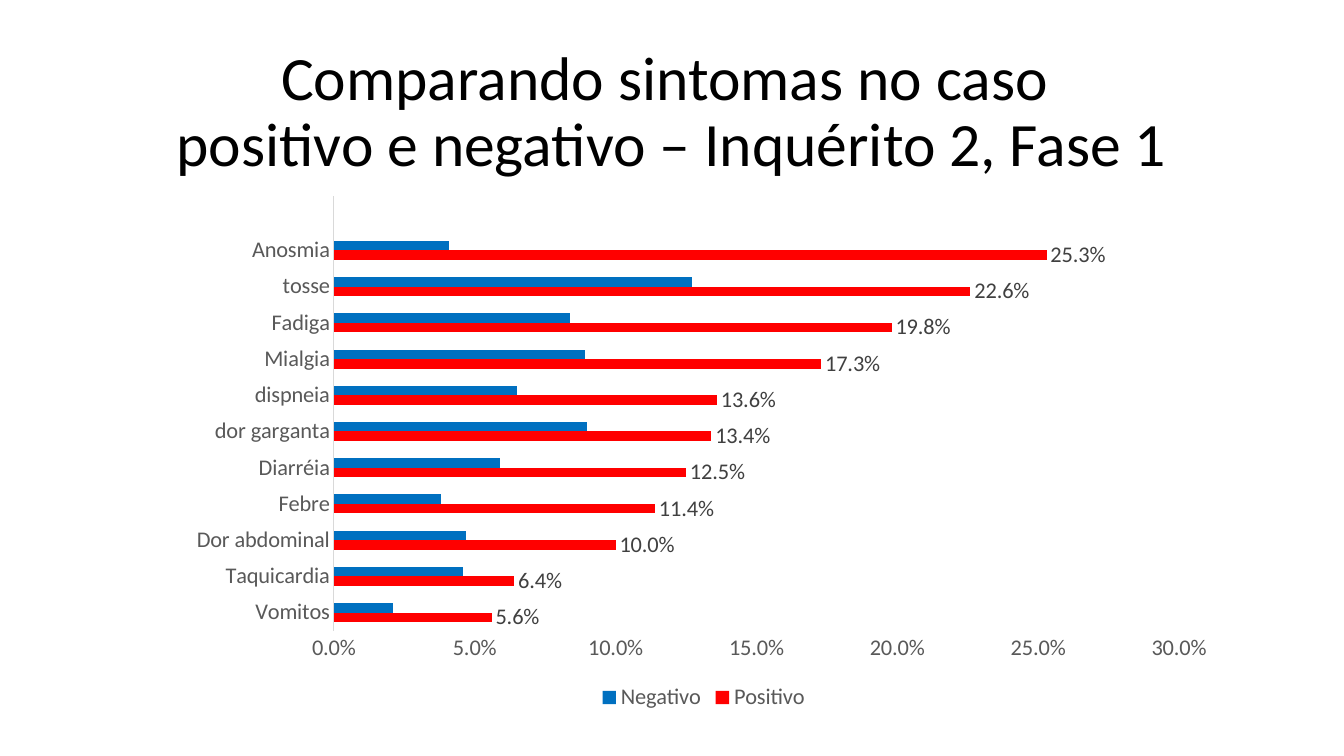
from lxml.etree import SubElement
from pptx import Presentation
from pptx.chart.data import CategoryChartData
from pptx.dml.color import RGBColor as RGB
from pptx.enum.chart import XL_CHART_TYPE as CT, XL_LABEL_POSITION as LABEL
from pptx.enum.chart import XL_LEGEND_POSITION as LEGEND, XL_TICK_MARK as TICK
from pptx.enum.text import MSO_ANCHOR as ANCHOR, PP_ALIGN as ALIGN
from pptx.oxml.ns import qn
from pptx.util import Pt

TITLE = "Comparando sintomas no caso \vpositivo e negativo – Inquérito 2, Fase 1"
SYMPTOMS = [
    ("Vomitos", 0.056, 0.021),
    ("Taquicardia", 0.064, 0.046),
    ("Dor abdominal", 0.1, 0.047),
    ("Febre", 0.114, 0.038),
    ("Diarréia", 0.125, 0.059),
    ("dor garganta", 0.134, 0.09),
    ("dispneia", 0.136, 0.065),
    ("Mialgia", 0.173, 0.089),
    ("Fadiga", 0.198, 0.084),
    ("tosse", 0.226, 0.127),
    ("Anosmia", 0.253, 0.041),
    ("", None, None),
]
COLORS = {"Positivo": "FF0000", "Negativo": "0070C0", "title": "000000",
          "axis": "595959", "label": "404040", "line": "D9D9D9"}
FONT = "Calibri"
PERCENT = "###0.0%"
PLOT_AREA = {"x": 0.15, "y": 0.02, "w": 0.8, "h": 0.82}


def style_font(font, size, color):
    font.name, font.size, font.bold = FONT, Pt(size), False
    font.color.rgb = RGB.from_string(COLORS[color])


def add_text(slide, text, *, left, top, width, height, size, color):
    s = slide.shapes.add_textbox(Pt(left), Pt(top), Pt(width), Pt(height))
    tf = s.text_frame
    tf.word_wrap = True
    tf.vertical_anchor = ANCHOR.MIDDLE
    p = tf.paragraphs[0]
    p.text = text
    p.alignment = ALIGN.CENTER
    p.line_spacing = 0.9
    for r in p.runs:
        style_font(r.font, size, color)


def place_plot(chart):
    plot_area = chart._chartSpace.chart.plotArea
    layout = plot_area.find(qn("c:layout"))
    if layout is None:
        layout = SubElement(plot_area, qn("c:layout"))
        plot_area.insert(0, layout)
    manual = SubElement(layout, qn("c:manualLayout"))
    settings = {"layoutTarget": "inner", "xMode": "edge", "yMode": "edge", **PLOT_AREA}
    for tag, value in settings.items():
        SubElement(manual, qn(f"c:{tag}")).set("val", str(value))


def add_symptom_chart(slide):
    names, positive, negative = zip(*SYMPTOMS)
    data = CategoryChartData(number_format=PERCENT)
    data.categories = names
    data.add_series("Positivo", positive)
    data.add_series("Negativo", negative)
    chart = slide.shapes.add_chart(
        CT.BAR_CLUSTERED, Pt(125.3), Pt(132.5), Pt(754.6), Pt(378.7), data).chart
    style_font(chart.font, 10, "title")
    chart.has_title = False
    place_plot(chart)

    plot = chart.plots[0]
    plot.gap_width = 182
    plot.overlap = 0
    plot.vary_by_categories = False
    for series in plot.series:
        series.format.fill.solid()
        series.format.fill.fore_color.rgb = RGB.from_string(COLORS[series.name])
        series.invert_if_negative = False

    labels = plot.series[0].data_labels
    labels.show_value = True
    labels.position = LABEL.OUTSIDE_END
    labels.number_format = PERCENT
    labels.number_format_is_linked = False
    style_font(labels.font, 16, "label")

    for axis in (chart.category_axis, chart.value_axis):
        axis.major_tick_mark = axis.minor_tick_mark = TICK.NONE
        axis.has_major_gridlines = False
        style_font(axis.tick_labels.font, 16, "axis")
    line = chart.category_axis.format.line
    line.color.rgb = RGB.from_string(COLORS["line"])
    line.width = Pt(0.75)
    values = chart.value_axis
    values.format.line.fill.background()
    values.minimum_scale, values.maximum_scale, values.major_unit = 0, 0.3, 0.05
    values.tick_labels.number_format = PERCENT
    values.tick_labels.number_format_is_linked = False

    chart.has_legend = True
    chart.legend.position = LEGEND.BOTTOM
    chart.legend.include_in_layout = False
    style_font(chart.legend.font, 16, "axis")


def main():
    prs = Presentation()
    prs.slide_width, prs.slide_height = Pt(960), Pt(540)
    slide = prs.slides.add_slide(prs.slide_layouts[6])
    add_text(slide, TITLE, left=66, top=28.8, width=828, height=104.4,
             size=44, color="title")
    add_symptom_chart(slide)
    prs.save("out.pptx")


if __name__ == "__main__":
    main()
